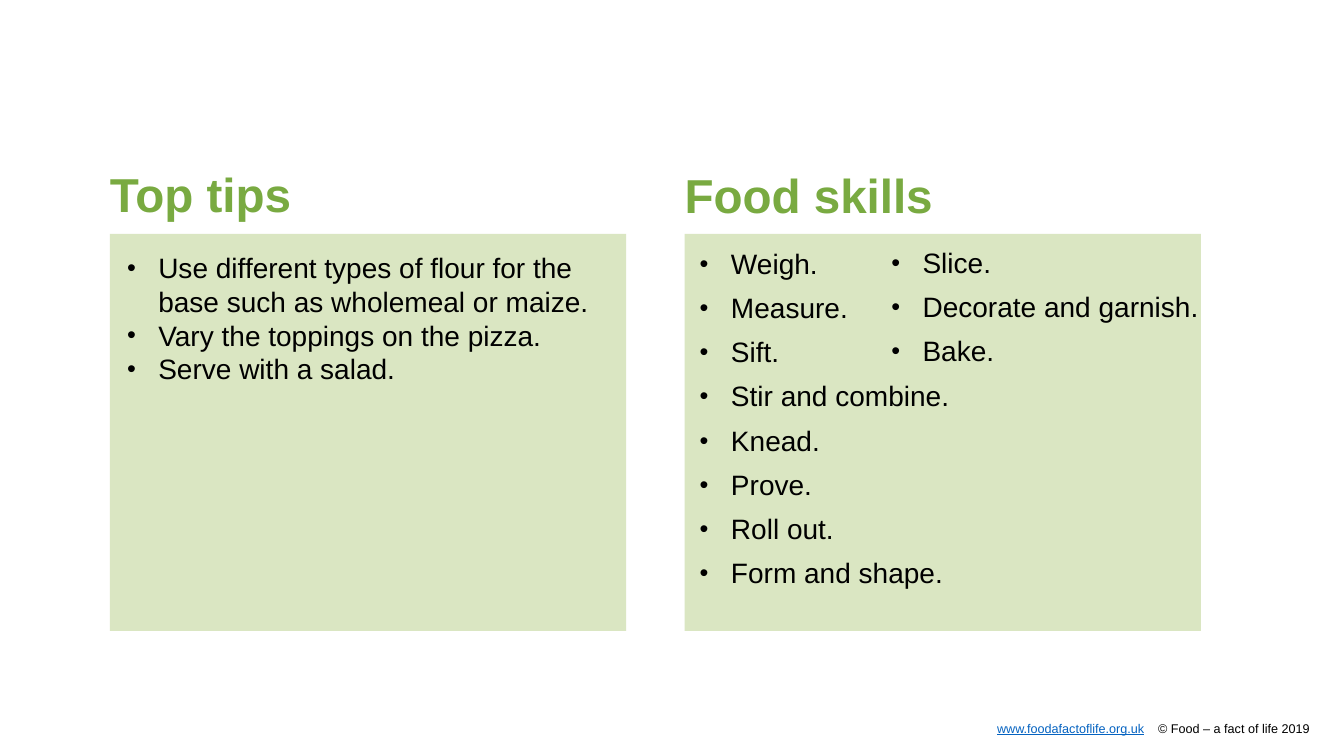
from lxml.etree import SubElement
from pptx import Presentation
from pptx.dml.color import RGBColor
from pptx.enum.shapes import MSO_SHAPE
from pptx.enum.text import MSO_ANCHOR, PP_ALIGN
from pptx.oxml.ns import qn
from pptx.util import Inches, Pt

GREEN, PALE_GREEN, BLACK, LINK_BLUE = "79AA41", "DAE6C2", "000000", "0563C1"
TIPS_LEFT, SKILLS_LEFT = 1.09, 6.79
TIPS = ["Use different types of flour for the base such as wholemeal or maize.",
        "Vary the toppings on the pizza.", "Serve with a salad."]
SKILLS = ["Weigh.", "Measure.", "Sift.", "Stir and combine.", "Knead.", "Prove.",
          "Roll out.", "Form and shape."]
MORE_SKILLS = ["Slice.", "Decorate and garnish.", "Bake."]


def color(hex_value):
    return RGBColor.from_string(hex_value)


def set_font(font, size, hex_value, bold=False):
    font.name, font.size, font.bold = "Arial", Pt(size), bold
    font.color.rgb = color(hex_value)


def place(s, left, top, width, height):
    """Set the frame of a text shape and remove its inner margins."""
    s.left, s.top, s.width, s.height = map(Inches, (left, top, width, height))
    tf = s.text_frame
    tf.word_wrap = True
    tf.vertical_anchor = MSO_ANCHOR.TOP
    tf.margin_left = tf.margin_top = tf.margin_right = tf.margin_bottom = 0
    return tf


def add_text(slide, *frame):
    return place(slide.shapes.add_textbox(0, 0, 0, 0), *frame)


def add_panel(slide, left):
    s = slide.shapes.add_shape(MSO_SHAPE.RECTANGLE, Inches(left), Inches(2.32),
                               Inches(5.12), Inches(3.94))
    s.shadow.inherit = False
    s.fill.solid()
    s.fill.fore_color.rgb = color(PALE_GREEN)
    s.line.fill.background()


def write_heading(tf, text):
    tf.text = text
    p = tf.paragraphs[0]
    p.alignment = PP_ALIGN.LEFT
    p.line_spacing = 0.9
    set_font(p.runs[0].font, 34, GREEN, bold=True)


def add_bullets(slide, left, top, items, line_spacing=0.9, gap=10):
    tf = add_text(slide, left, top, 4.78, 3.94)
    tf.text = "\n".join(items)
    for i, p in enumerate(tf.paragraphs):
        pPr = p._p.get_or_add_pPr()
        pPr.set("marL", str(Inches(0.31)))
        pPr.set("indent", str(-Inches(0.31)))
        p.line_spacing = line_spacing
        p.space_before = Pt(gap if i else 0)
        SubElement(pPr, qn("a:buSzPct"), val="90000")
        SubElement(pPr, qn("a:buFont"), typeface="Arial")
        SubElement(pPr, qn("a:buChar"), char="•")
        set_font(p.runs[0].font, 20, BLACK)


def add_footer(slide):
    p = add_text(slide, 1.26, 7.15, 11.73, 0.15).paragraphs[0]
    p.alignment = PP_ALIGN.RIGHT
    for text, hex_value, underline in (
            ("www.foodafactoflife.org.uk", LINK_BLUE, True),
            ("    © Food – a fact of life 2019", BLACK, False)):
        r = p.add_run()
        r.text = text
        set_font(r.font, 9, hex_value)
        r.font.underline = underline


def main():
    prs = Presentation()
    prs.slide_width, prs.slide_height = Inches(13.33), Inches(7.5)
    slide = prs.slides.add_slide(prs.slide_layouts[5])
    add_footer(slide)

    add_panel(slide, TIPS_LEFT)
    write_heading(place(slide.shapes.title, TIPS_LEFT, 1.7, 10.63, 0.79), "Top tips")
    add_bullets(slide, 1.26, 2.49, TIPS, line_spacing=1.0, gap=0)

    add_panel(slide, SKILLS_LEFT)
    write_heading(add_text(slide, SKILLS_LEFT, 1.71, 10.63, 0.79), "Food skills")
    add_bullets(slide, 6.94, 2.48, SKILLS)
    add_bullets(slide, 8.84, 2.47, MORE_SKILLS)
    prs.save("out.pptx")


if __name__ == "__main__":
    main()
